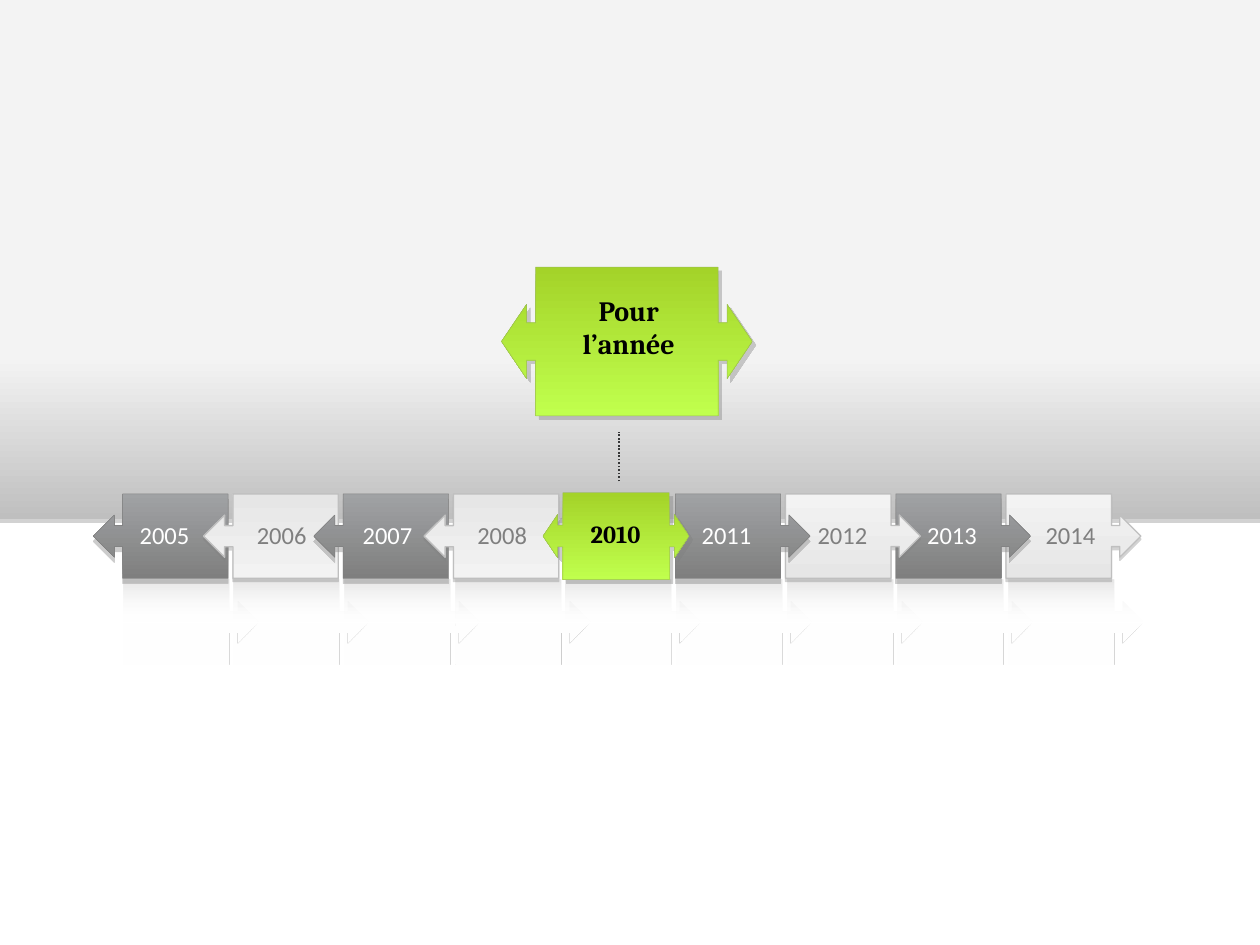
from lxml import etree
from pptx import Presentation
from pptx.dml.color import RGBColor
from pptx.enum.dml import MSO_LINE
from pptx.enum.shapes import MSO_CONNECTOR, MSO_SHAPE
from pptx.enum.text import MSO_AUTO_SIZE, PP_ALIGN
from pptx.oxml.ns import qn
from pptx.util import Inches, Pt

RECT = MSO_SHAPE.RECTANGLE
ARROW = MSO_SHAPE.RIGHT_ARROW_CALLOUT
DOUBLE = MSO_SHAPE.LEFT_RIGHT_ARROW_CALLOUT
STRAIGHT = MSO_CONNECTOR.STRAIGHT
DOTTED = MSO_LINE.ROUND_DOT
CENTER = PP_ALIGN.CENTER
FIT = MSO_AUTO_SIZE.SHAPE_TO_FIT_TEXT

BLACK = RGBColor(0x00, 0x00, 0x00)
WHITE = RGBColor(0xFF, 0xFF, 0xFF)
NEAR_BLACK = RGBColor(0x02, 0x00, 0x00)
CHARCOAL = RGBColor(0x35, 0x36, 0x37)
GRAY = RGBColor(0x7F, 0x7F, 0x7F)
MID_GRAY = RGBColor(0xA0, 0xA2, 0xA4)
SHADOW = RGBColor(0x80, 0x80, 0x80)
SILVER = RGBColor(0xBF, 0xBF, 0xBF)
PALE = RGBColor(0xE6, 0xE6, 0xE6)
PALEST = RGBColor(0xF3, 0xF3, 0xF3)
LIME = RGBColor(0xA4, 0xD3, 0x29)
BRIGHT_LIME = RGBColor(0xC0, 0xFF, 0x4D)
OLIVE = RGBColor(0x9B, 0xBB, 0x59)

ARROW_ADJ = (0.25, 0.25, 0.25, 0.782)
DOUBLE_ADJ = (0.25, 0.25, 0.169, 0.728)
STEP = 0.875
ARROW_W, ARROW_H = 1.07, 0.67
ROW_Y = 3.92

prs = Presentation()
prs.slide_width, prs.slide_height = Inches(10), Inches(7.5)
s = prs.slides.add_slide(prs.slide_layouts[6])


def add_block(kind, box, stops, adj=(), line=None, shadow=None):
    sp = s.shapes.add_shape(kind, *[Inches(v) for v in box])
    for i, value in enumerate(adj):
        sp.adjustments[i] = value
    sp.fill.gradient()
    sp.fill.gradient_angle = 270
    gs_lst = sp._element.spPr.find(qn("a:gradFill")).find(qn("a:gsLst"))
    for gs in list(gs_lst):
        gs_lst.remove(gs)
    for pos, color, alpha in stops:
        gs = etree.SubElement(gs_lst, qn("a:gs"), pos=str(pos * 1000))
        clr = etree.SubElement(gs, qn("a:srgbClr"), val=str(color))
        if alpha < 100:
            etree.SubElement(clr, qn("a:alpha"), val=str(alpha * 1000))
    if line:
        sp.line.color.rgb, sp.line.width = line[0], Pt(line[1])
    else:
        sp.line.fill.background()
    sp.shadow.inherit = False
    if shadow:
        alpha, dist, angle = shadow
        effects = sp._element.spPr.find(qn("a:effectLst"))
        shdw = etree.SubElement(effects, qn("a:outerShdw"), blurRad="0", dist=str(Pt(dist)),
                                dir=str(angle * 60000), rotWithShape="0")
        clr = etree.SubElement(shdw, qn("a:srgbClr"), val=str(SHADOW))
        etree.SubElement(clr, qn("a:alpha"), val=str(alpha * 1000))
    return sp


def add_label(text, box, size, font, color, bold=False, wrap=False):
    tf = s.shapes.add_textbox(*[Inches(v) for v in box]).text_frame
    tf.word_wrap = wrap
    tf.auto_size = FIT
    tf.text = text
    p = tf.paragraphs[0]
    f = p.runs[0].font
    f.size, f.name, f.bold, f.color.rgb = Pt(size), font, bold, color
    return p


add_block(RECT, (0, 0, 10, 4.12),
          [(0, PALEST, 100), (48, PALEST, 100), (69, PALEST, 100), (100, SILVER, 100)],
          shadow=(35, 1.8, 90))

for i in reversed(range(9)):
    add_block(ARROW, (0.98 + 0.878 * i, 4.6, ARROW_W, ARROW_H),
              [(0, NEAR_BLACK, 10), (51, WHITE, 0), (60, WHITE, 100)], ARROW_ADJ)

DARK = ([(0, MID_GRAY, 100), (100, GRAY, 100)], (GRAY, 0.25), (40, 3, 90))
LIGHT = ([(0, PALEST, 100), (100, PALE, 100)], (SILVER, 0.75), (35, 1.8, 90))
DARK_LEFT = ([(0, GRAY, 100), (100, MID_GRAY, 100)], *DARK[1:])
for x, col, style, rotation in [
    (0.74, 0, DARK_LEFT, 180), (0.74, 1, LIGHT, 180), (0.74, 2, DARK_LEFT, 180),
    (5.36, 3, LIGHT, 0), (5.36, 2, DARK, 0), (5.36, 1, LIGHT, 0), (5.36, 0, DARK, 0),
    (0.74, 3, LIGHT, 180),
]:
    stops, line, shadow = style
    sp = add_block(ARROW, (x + STEP * col, ROW_Y, ARROW_W, ARROW_H),
                   stops, ARROW_ADJ, line, shadow)
    sp.rotation = rotation

for box in [(4.31, 3.91, 1.16, 0.69), (3.98, 2.12, 1.99, 1.18)]:
    add_block(DOUBLE, box, [(0, LIME, 100), (100, BRIGHT_LIME, 100)],
              DOUBLE_ADJ, (OLIVE, 0.25), (40, 3, 45))

for year, x, color in [
    ("2005", 1.01, WHITE), ("2006", 1.94, GRAY), ("2007", 2.78, WHITE), ("2008", 3.69, GRAY),
    ("2011", 5.47, WHITE), ("2012", 6.39, GRAY), ("2013", 7.26, WHITE), ("2014", 8.2, GRAY),
]:
    add_label(year, (x, 4.08, 0.6, 0.34), 14, "Calibri", color)
add_label("2010", (4.59, 4.07, 0.6, 0.34), 14, "Cambria", BLACK, True)

link = s.shapes.add_connector(STRAIGHT, Inches(4.91), Inches(3.82), Inches(4.91), Inches(3.43))
link.line.color.rgb, link.line.width, link.line.dash_style = CHARCOAL, Pt(1), DOTTED
etree.SubElement(link._element.spPr, qn("a:effectLst"))

p = add_label("Pour l’année", (4.32, 2.28, 1.34, 0.64), 16, "Cambria", BLACK, True, True)
p.alignment = CENTER

prs.save("out.pptx")
